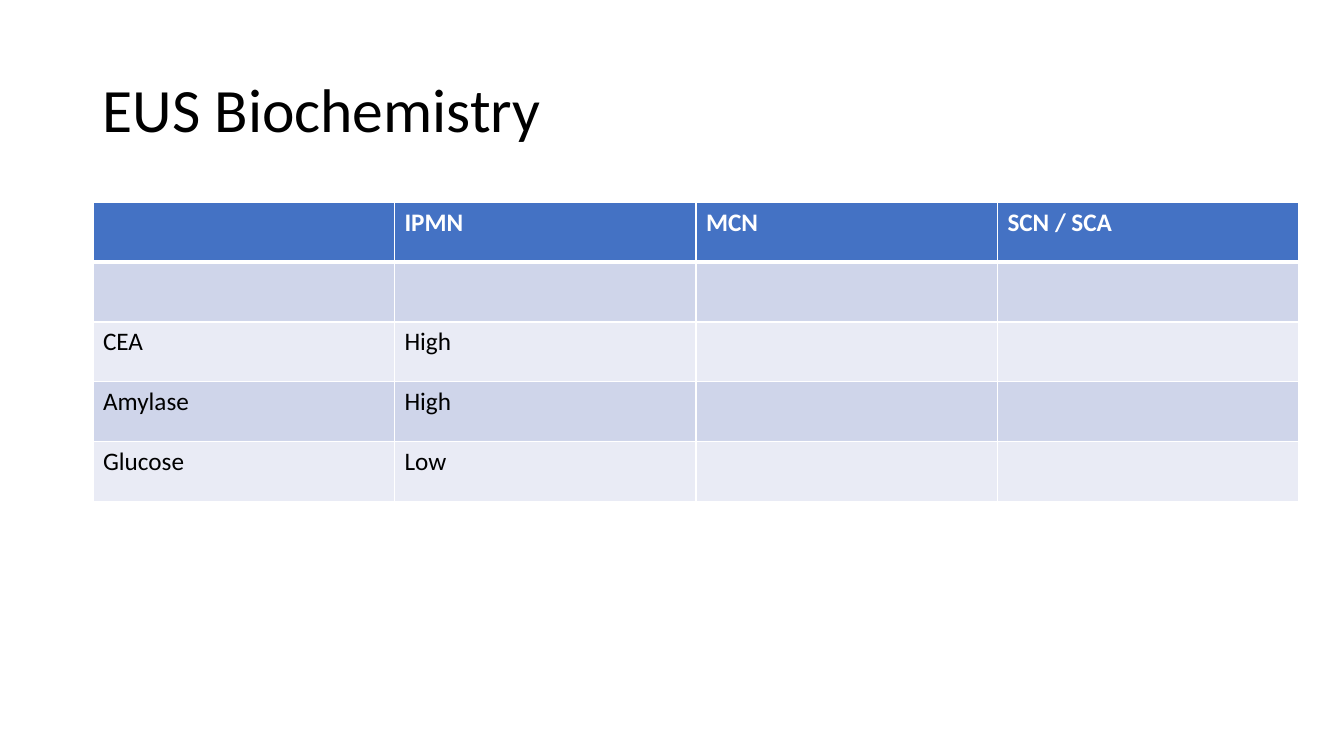
from lxml import etree
from pptx import Presentation
from pptx import util as u
from pptx.dml.color import RGBColor
from pptx.enum import text
from pptx.oxml import ns

TITLE = "EUS Biochemistry"
ROWS = [
    ["", "IPMN", "MCN", "SCN / SCA"],
    ["", "", "", ""],
    ["CEA", "High", "", ""],
    ["Amylase", "High", "", ""],
    ["Glucose", "Low", "", ""],
]
COLORS = {
    "text": "000000",
    "white": "FFFFFF",
    "header": "4472C4",
    "odd": "CFD5EA",
    "even": "E9EBF5",
}
FONT = "Calibri"
SLIDE_SIZE = (1344, 756)
TITLE_BOX = (93, 40, 1159, 146)
TABLE_BOX = (93, 202, 1206, 300)
EMU_PER_PX = 12192000 / SLIDE_SIZE[0]


def px(length):
    return u.Emu(round(length * EMU_PER_PX))


def color(name):
    return RGBColor.from_string(COLORS[name])


def style_font(paragraph, size, color_name, bold=False):
    paragraph.font.name = FONT
    paragraph.font.size = u.Pt(size)
    paragraph.font.bold = bold
    paragraph.font.color.rgb = color(color_name)


def add_border(cell, side, points):
    properties = cell._tc.get_or_add_tcPr()
    line = etree.SubElement(properties, ns.qn(f"a:ln{side}"), w=str(u.Pt(points)))
    fill = etree.SubElement(line, ns.qn("a:solidFill"))
    etree.SubElement(fill, ns.qn("a:srgbClr"), val=COLORS["white"])


def add_title(slide):
    shape = slide.shapes.add_textbox(*map(px, TITLE_BOX))
    frame = shape.text_frame
    frame.word_wrap = True
    frame.vertical_anchor = text.MSO_ANCHOR.MIDDLE
    paragraph = frame.paragraphs[0]
    paragraph.text = TITLE
    paragraph.line_spacing = 0.9
    style_font(paragraph, 44, "text")


def style_cell(cell, row, value):
    is_header = row == 0
    border_widths = {
        "L": 1,
        "R": 1,
        "T": 3 if row == 1 else 1,
        "B": 3 if is_header else 1,
    }
    for side, points in border_widths.items():
        add_border(cell, side, points)
    cell.fill.solid()
    cell.fill.fore_color.rgb = color("header" if is_header else "odd" if row % 2 else "even")
    paragraph = cell.text_frame.paragraphs[0]
    paragraph.text = value
    style_font(paragraph, 18, "white" if is_header else "text", is_header)


def add_results_table(slide):
    shape = slide.shapes.add_table(len(ROWS), len(ROWS[0]), *map(px, TABLE_BOX))
    for row, values in enumerate(ROWS):
        for column, value in enumerate(values):
            style_cell(shape.table.cell(row, column), row, value)


def main():
    presentation = Presentation()
    presentation.slide_width, presentation.slide_height = map(px, SLIDE_SIZE)
    slide = presentation.slides.add_slide(presentation.slide_layouts[6])
    add_title(slide)
    add_results_table(slide)
    presentation.save("out.pptx")


if __name__ == "__main__":
    main()
